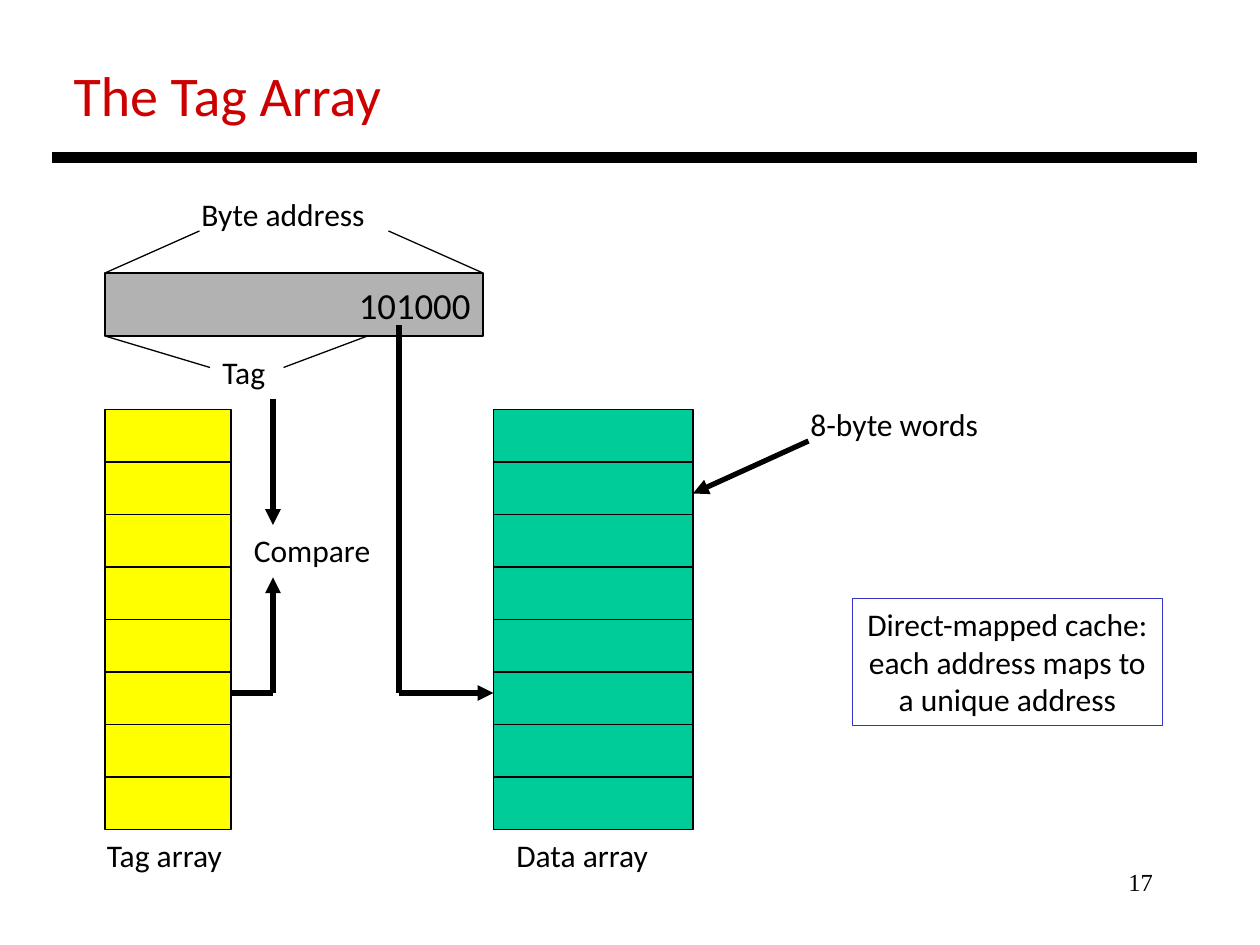
from lxml.etree import SubElement
from pptx import Presentation
from pptx.dml.color import RGBColor
from pptx.enum.shapes import MSO_CONNECTOR, MSO_SHAPE
from pptx.enum.text import MSO_ANCHOR, PP_ALIGN
from pptx.oxml.ns import qn
from pptx.util import Pt

PX = 7620  # 120 px to the inch
BLACK = RGBColor(0x00, 0x00, 0x00)
RED = RGBColor(0xCC, 0x00, 0x00)
GREEN = RGBColor(0x00, 0xCC, 0x99)
YELLOW = RGBColor(0xFF, 0xFF, 0x00)
GRAY = RGBColor(0xB2, 0xB2, 0xB2)
BLUE = RGBColor(0x33, 0x33, 0xCC)
THIN, THICK, RULE = 0.75, 3, 6
ROWS = 8


def emu(*lengths):
    return [n * PX for n in lengths]


def write(sp, text, size=18, color=BLACK, font="Calibri", align=PP_ALIGN.LEFT,
          anchor=MSO_ANCHOR.TOP):
    tf = sp.text_frame
    tf.text = text
    tf.word_wrap = False
    tf.vertical_anchor = anchor
    for p in tf.paragraphs:
        p.alignment = align
        for r in p.runs:
            r.font.size = Pt(size)
            r.font.name = font
            r.font.color.rgb = color


def add_label(slide, box, text, **style):
    sp = slide.shapes.add_textbox(*emu(*box))
    write(sp, text, **style)
    return sp


def add_rect(slide, box, fill):
    sp = slide.shapes.add_shape(MSO_SHAPE.RECTANGLE, *emu(*box))
    sp.shadow.inherit = False
    sp.fill.solid()
    sp.fill.fore_color.rgb = fill
    sp.line.color.rgb = BLACK
    sp.line.width = Pt(THIN)
    return sp


def add_line(slide, start, end, width=THIN, arrow=False):
    line = slide.shapes.add_connector(MSO_CONNECTOR.STRAIGHT, *emu(*start, *end))
    line.line.color.rgb = BLACK
    line.line.width = Pt(width)
    if arrow:
        SubElement(line.line._get_or_add_ln(), qn("a:tailEnd"), type="triangle")
    SubElement(line._element.spPr, qn("a:effectLst"))


def draw_header(slide, box):
    """Title with the heavy rule below it."""
    x, y, w, h = box
    title = slide.shapes.title
    title.left, title.top, title.width, title.height = emu(x + 8, y, 320, 77)
    write(title, "The Tag Array", size=32, color=RED)
    add_line(slide, (x, y + h), (x + w, y + h), RULE)


def draw_address(slide, box):
    """Address bar with the byte address above and the tag below."""
    x, y, w, h = box
    bottom = y + h
    bar = add_rect(slide, box, GRAY)
    write(bar, "101000", size=21, align=PP_ALIGN.RIGHT, anchor=MSO_ANCHOR.MIDDLE)
    add_label(slide, (x + 80, y - 80, 181, 48), "Byte address")
    add_line(slide, (x + 90, y - 40), (x, y))
    add_line(slide, (x + w - 90, y - 40), (x + w, y))
    add_label(slide, (x + 100, bottom + 10, 66, 48), "Tag")
    add_line(slide, (x, bottom), (x + 100, bottom + 30))
    add_line(slide, (x + 170, bottom + 30), (x + 250, bottom))


def draw_array(slide, box, fill, caption, caption_dx, caption_w):
    x, y, w, h = box
    row_h = h // ROWS
    for i in range(ROWS):
        add_rect(slide, (x, y + i * row_h, w, row_h), fill)
    add_label(slide, (x + caption_dx, y + h, caption_w, 48), caption)


def draw_compare(slide, box):
    """Tag from above and stored tag from below meet at the comparison."""
    x, y, w, h = box
    right, bottom = x + w, y + h
    add_line(slide, (right, y), (right, y + 120), THICK, arrow=True)
    add_label(slide, (x + 10, y + 120, 137, 48), "Compare")
    add_line(slide, (x, bottom), (right, bottom), THICK)
    add_line(slide, (right, bottom), (right, y + 170), THICK, arrow=True)


def draw_index_path(slide, box):
    """Path from the index bits down and across to the data row."""
    x, y, w, h = box
    add_line(slide, (x, y), (x, y + h), THICK)
    add_line(slide, (x, y + h), (x + w, y + h), THICK, arrow=True)


def draw_word_size(slide, box):
    x, y, w, h = box
    add_label(slide, (x + 100, y, w - 100, 48), "8-byte words")
    add_line(slide, (x + 110, y + 40), (x, y + h), THICK, arrow=True)


def draw_note(slide, box):
    note = add_label(
        slide, box,
        "Direct-mapped cache:\neach address maps to\na unique address",
        align=PP_ALIGN.CENTER)
    note.line.color.rgb = BLUE
    note.line.width = Pt(THIN)


def main():
    prs = Presentation()
    prs.slide_width, prs.slide_height = emu(1200, 900)
    slide = prs.slides.add_slide(prs.slide_layouts[5])

    draw_header(slide, (50, 52, 1090, 98))
    draw_array(slide, (470, 390, 190, 400), GREEN, "Data array", 10, 151)
    draw_word_size(slide, (660, 380, 286, 90))
    draw_address(slide, (100, 260, 360, 60))
    draw_index_path(slide, (380, 310, 90, 350))
    draw_note(slide, (812, 570, 295, 121))
    draw_array(slide, (100, 390, 120, 400), YELLOW, "Tag array", -10, 134)
    draw_compare(slide, (220, 380, 40, 280))
    add_label(slide, (860, 820, 250, 60), "17", size=14,
              font="Times New Roman", align=PP_ALIGN.RIGHT)

    prs.save("out.pptx")


if __name__ == "__main__":
    main()
